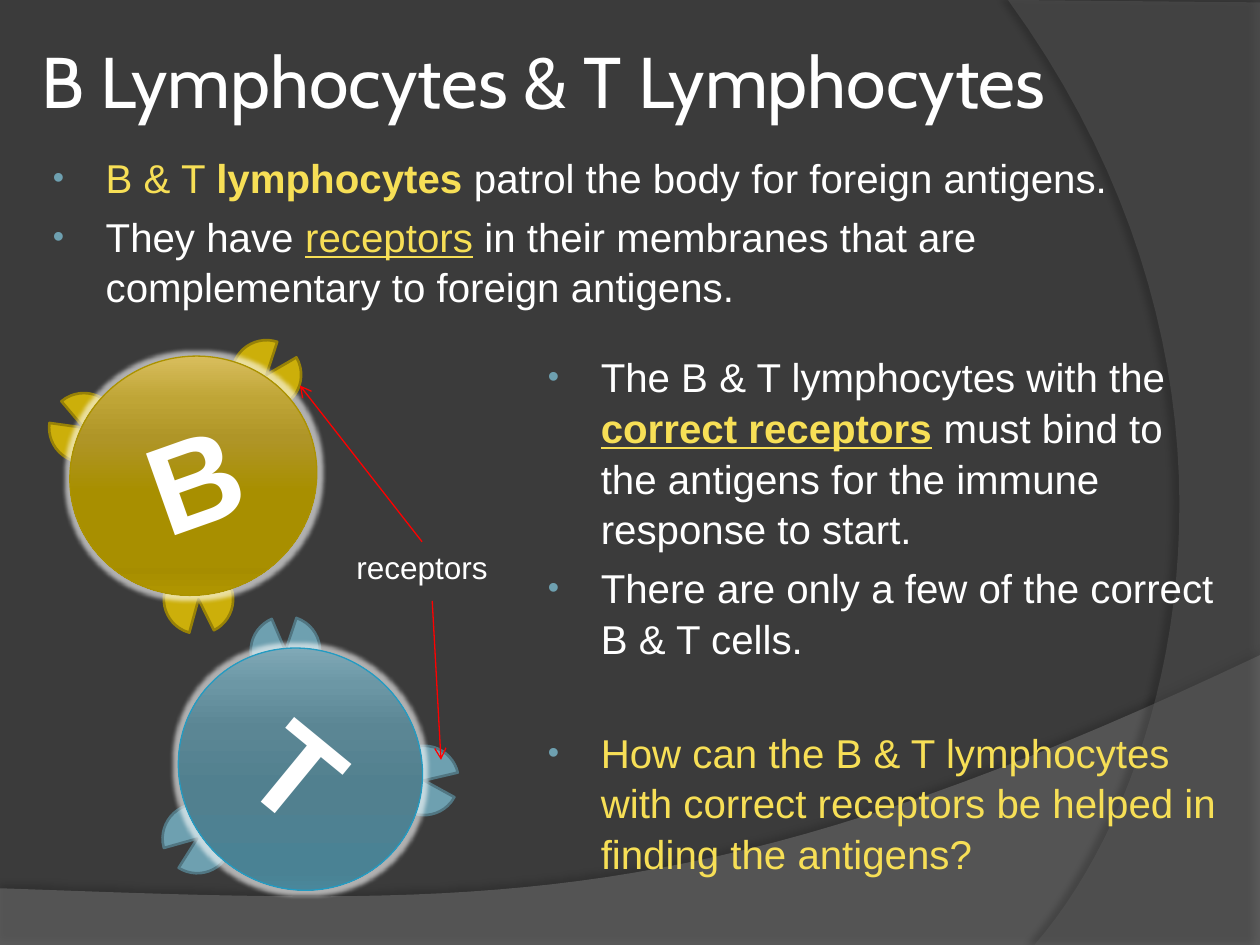
from dataclasses import dataclass

import lxml.etree
import pptx
import pptx.dml.color
import pptx.enum.shapes
import pptx.enum.text
import pptx.oxml.ns
import pptx.util

Pt = pptx.util.Pt
RGBColor = pptx.dml.color.RGBColor
SHAPE = pptx.enum.shapes.MSO_SHAPE
ALIGN = pptx.enum.text.PP_ALIGN
ANCHOR = pptx.enum.text.MSO_ANCHOR
qn = pptx.oxml.ns.qn

WHITE = RGBColor(0xFF, 0xFF, 0xFF)
BLACK = RGBColor(0x00, 0x00, 0x00)
RED = RGBColor(0xFF, 0x00, 0x00)
YELLOW = RGBColor(0xF7, 0xDF, 0x56)
TEAL = RGBColor(0x6E, 0xA0, 0xB0)
TEAL_EDGE = RGBColor(0x51, 0x76, 0x82)
TEAL_RIM = RGBColor(0x23, 0x9B, 0xC2)
GOLD = RGBColor(0xCC, 0xAF, 0x0A)
GOLD_EDGE = RGBColor(0x97, 0x81, 0x07)
GOLD_RIM = RGBColor(0xAB, 0x92, 0x00)
BACKGROUND = RGBColor(0x3B, 0x3B, 0x3B)
SWOOSH_GRAY = RGBColor(0x7F, 0x7F, 0x7F)
ARC_GRAY = RGBColor(0x5E, 0x5E, 0x5E)

GRADIENT_STOPS = (0, 25, 38, 55, 80, 88, 100)
GOLD_RAMP = ("EED27E", "BFA536", "AF9527", "A88F00", "A68D00", "AF9500", "E6C100")
TEAL_RAMP = ("9EC4D2", "6C97A5", "5B8694", "51808F", "4A8294", "4A8BA0", "5DAAC2")
RECEPTOR_SIZE = 39.6
CELL_SIZE = (141.8, 136.1)


@dataclass
class Run:
    text: str
    color: RGBColor = WHITE
    bold: bool = False
    underline: bool = False


@dataclass
class Para:
    runs: list[Run]
    space_before: float = 4.6


@dataclass
class Receptor:
    left: float
    top: float
    rotation: float


@dataclass
class Cell:
    letter: str
    left: float
    top: float
    rotation: float
    ramp: tuple[str, ...]
    rim: RGBColor
    receptor_fill: RGBColor
    receptor_edge: RGBColor
    receptors: list[Receptor]


@dataclass
class Band:
    corners: list[tuple[float, float]]
    controls: list[tuple[float, float]]
    color: RGBColor
    opacity: int
    shadow_opacity: int
    shadow_distance: float
    shadow_angle: int


def add_xml(parent, tag: str, **attrs):
    return lxml.etree.SubElement(parent, qn(tag), {k: str(v) for k, v in attrs.items()})


def add_effect(sp, tag: str, color: RGBColor, opacity: int, **attrs) -> None:
    effect = add_xml(sp._element.spPr.find(qn("a:effectLst")), tag, **attrs)
    add_xml(add_xml(effect, "a:srgbClr", val=color), "a:alpha", val=opacity * 1000)


def write_text(sp, paras: list[Para], *, size: float, font: str = "Arial", align=ALIGN.LEFT,
               anchor=ANCHOR.TOP, bullets: bool = False, spacing: float = 1.0) -> None:
    tf = sp.text_frame
    tf.word_wrap = True
    tf.vertical_anchor = anchor
    for i, para in enumerate(paras):
        p = tf.add_paragraph() if i else tf.paragraphs[0]
        p.alignment = align
        p.line_spacing = spacing
        if bullets:
            p.space_before = Pt(para.space_before)
            pPr = p._p.get_or_add_pPr()
            pPr.set("marL", str(Pt(33.1)))
            pPr.set("indent", str(Pt(-30.2)))
            add_xml(add_xml(pPr, "a:buClr"), "a:srgbClr", val=TEAL)
            add_xml(pPr, "a:buSzPct", val=80000)
            add_xml(pPr, "a:buFont", typeface="Arial")
            add_xml(pPr, "a:buChar", char="•")
        for run in para.runs:
            r = p.add_run()
            r.text = run.text
            r.font.name = font
            r.font.size = Pt(size)
            r.font.color.rgb = run.color
            r.font.bold = run.bold
            r.font.underline = run.underline


def add_textbox(s, left: float, top: float, width: float, height: float):
    return s.shapes.add_textbox(Pt(left), Pt(top), Pt(width), Pt(height))


def bezier(points: list[tuple[float, float]], steps: int = 40) -> list[tuple[float, float]]:
    curve = []
    for i in range(1, steps + 1):
        t = i / steps
        weights = ((1 - t) ** 3, 3 * t * (1 - t) ** 2, 3 * t * t * (1 - t), t ** 3)
        curve.append(tuple(sum(w * pt[axis] for w, pt in zip(weights, points)) for axis in (0, 1)))
    return curve


def draw_band(s, band: Band) -> None:
    outline = band.corners + bezier([band.corners[-1], *band.controls])
    points = [(Pt(x), Pt(y)) for x, y in outline]
    builder = s.shapes.build_freeform(*points[0])
    builder.add_line_segments(points[1:], close=True)
    sp = builder.convert_to_shape()
    sp.fill.solid()
    sp.fill.fore_color.rgb = band.color
    color = sp._element.spPr.find(qn("a:solidFill")).find(qn("a:srgbClr"))
    add_xml(color, "a:alpha", val=band.opacity * 1000)
    sp.line.fill.background()
    sp.shadow.inherit = False
    add_effect(sp, "a:outerShdw", BLACK, band.shadow_opacity, blurRad=Pt(4),
               dist=Pt(band.shadow_distance), dir=band.shadow_angle * 60000, rotWithShape=0)


def draw_cell(s, cell: Cell) -> None:
    group = s.shapes.add_group_shape()
    for receptor in cell.receptors:
        sp = group.shapes.add_shape(SHAPE.PIE, Pt(receptor.left), Pt(receptor.top),
                                    Pt(RECEPTOR_SIZE), Pt(RECEPTOR_SIZE))
        sp.adjustments[0], sp.adjustments[1] = 187.125, 162
        sp.rotation = receptor.rotation
        sp.fill.solid()
        sp.fill.fore_color.rgb = cell.receptor_fill
        sp.line.color.rgb = cell.receptor_edge
        sp.line.width = Pt(1.5)
        sp.shadow.inherit = False
    width, height = CELL_SIZE
    sp = group.shapes.add_shape(SHAPE.OVAL, Pt(cell.left), Pt(cell.top), Pt(width), Pt(height))
    sp.rotation = cell.rotation
    sp.fill.gradient()
    sp.fill.gradient_angle = 270
    gradient = sp._element.spPr.find(qn("a:gradFill"))
    gradient.set("rotWithShape", "0")
    stops = gradient.find(qn("a:gsLst"))
    for stop in list(stops):
        stops.remove(stop)
    for position, color in zip(GRADIENT_STOPS, cell.ramp):
        add_xml(add_xml(stops, "a:gs", pos=position * 1000), "a:srgbClr", val=color)
    sp.line.color.rgb = cell.rim
    sp.line.width = Pt(0.75)
    sp.shadow.inherit = False
    add_effect(sp, "a:glow", WHITE, 60, rad=Pt(5))
    write_text(sp, [Para([Run(cell.letter, bold=True)])], size=72,
               align=ALIGN.CENTER, anchor=ANCHOR.MIDDLE)


def draw_arrow(s, x1: float, y1: float, x2: float, y2: float):
    line = s.shapes.add_connector(pptx.enum.shapes.MSO_CONNECTOR.STRAIGHT,
                                  Pt(x1), Pt(y1), Pt(x2), Pt(y2))
    line.line.color.rgb = RED
    line.line.width = Pt(0.75)
    add_xml(line.line._get_or_add_ln(), "a:tailEnd", type="arrow")
    add_xml(line._element.spPr, "a:effectLst")
    return line


BANDS = [
    Band([(0, 507.6), (0, 540), (720, 540), (720, 374.4)],
         [(402.5, 524.9), (281.5, 517.7), (0, 507.6)], SWOOSH_GRAY, 45, 35, 3.5, 270),
    Band([(576, 0), (720, 1.4), (720, 540), (591.1, 540)],
         [(673.2, 445.7), (733, 216), (576, 0)], ARC_GRAY, 40, 45, 4, 180),
]
CELLS = [
    Cell("B", 39.6, 203.8, 340.5, GOLD_RAMP, GOLD_RIM, GOLD, GOLD_EDGE,
         [Receptor(132.5, 194.4, 18), Receptor(93.6, 322.6, 153.5), Receptor(28.1, 224.6, 277.9)]),
    Cell("T", 100.8, 371.5, 39.4, TEAL_RAMP, TEAL_RIM, TEAL, TEAL_EDGE,
         [Receptor(222.5, 426.2, 76.9), Receptor(92.9, 459.4, 212.4),
          Receptor(143.3, 352.1, 336.8)]),
]
PATROL = [
    Para([Run("B & T ", YELLOW), Run("lymphocytes ", YELLOW, bold=True),
          Run("patrol the body for foreign antigens.")]),
    Para([Run("They have "), Run("receptors", YELLOW, underline=True),
          Run(" in their membranes that are complementary to foreign antigens.")]),
]
RESPONSE = [
    Para([Run("The B & T lymphocytes with the "),
          Run("correct receptors", YELLOW, bold=True, underline=True),
          Run(" must bind to the antigens for the immune response to start.")]),
    Para([Run("There are only a few of the correct B & T cells.")]),
    Para([Run("How can the B & T lymphocytes with correct receptors be helped in "
              "finding the antigens?", YELLOW)], space_before=36.3),
]


def main() -> None:
    prs = pptx.Presentation()
    prs.slide_width, prs.slide_height = Pt(720), Pt(540)
    s = prs.slides.add_slide(prs.slide_layouts[6])
    s.background.fill.solid()
    s.background.fill.fore_color.rgb = BACKGROUND
    for band in BANDS:
        draw_band(s, band)

    title = add_textbox(s, 20.2, 15.1, 680.4, 61.2)
    title.text_frame.margin_left = title.text_frame.margin_right = Pt(3.6)
    write_text(title, [Para([Run("B Lymphocytes & T Lymphocytes")])], size=41,
               font="Cabin", anchor=ANCHOR.MIDDLE)
    write_text(add_textbox(s, 20.2, 82.8, 680.4, 442.1), PATROL, size=23,
               bullets=True, spacing=1.05)
    for cell in CELLS:
        draw_cell(s, cell)

    label = add_textbox(s, 190.1, 309.6, 102.2, 28.8)
    write_text(label, [Para([Run("receptors")])], size=18, align=ALIGN.CENTER)
    draw_arrow(s, 241.2, 309.6, 171.4, 220.3).begin_connect(label, 0)
    draw_arrow(s, 247, 343.4, 252, 434.2)
    write_text(add_textbox(s, 303.1, 196.6, 402.5, 329), RESPONSE, size=23,
               bullets=True, spacing=1.05)
    prs.save("out.pptx")


if __name__ == "__main__":
    main()
